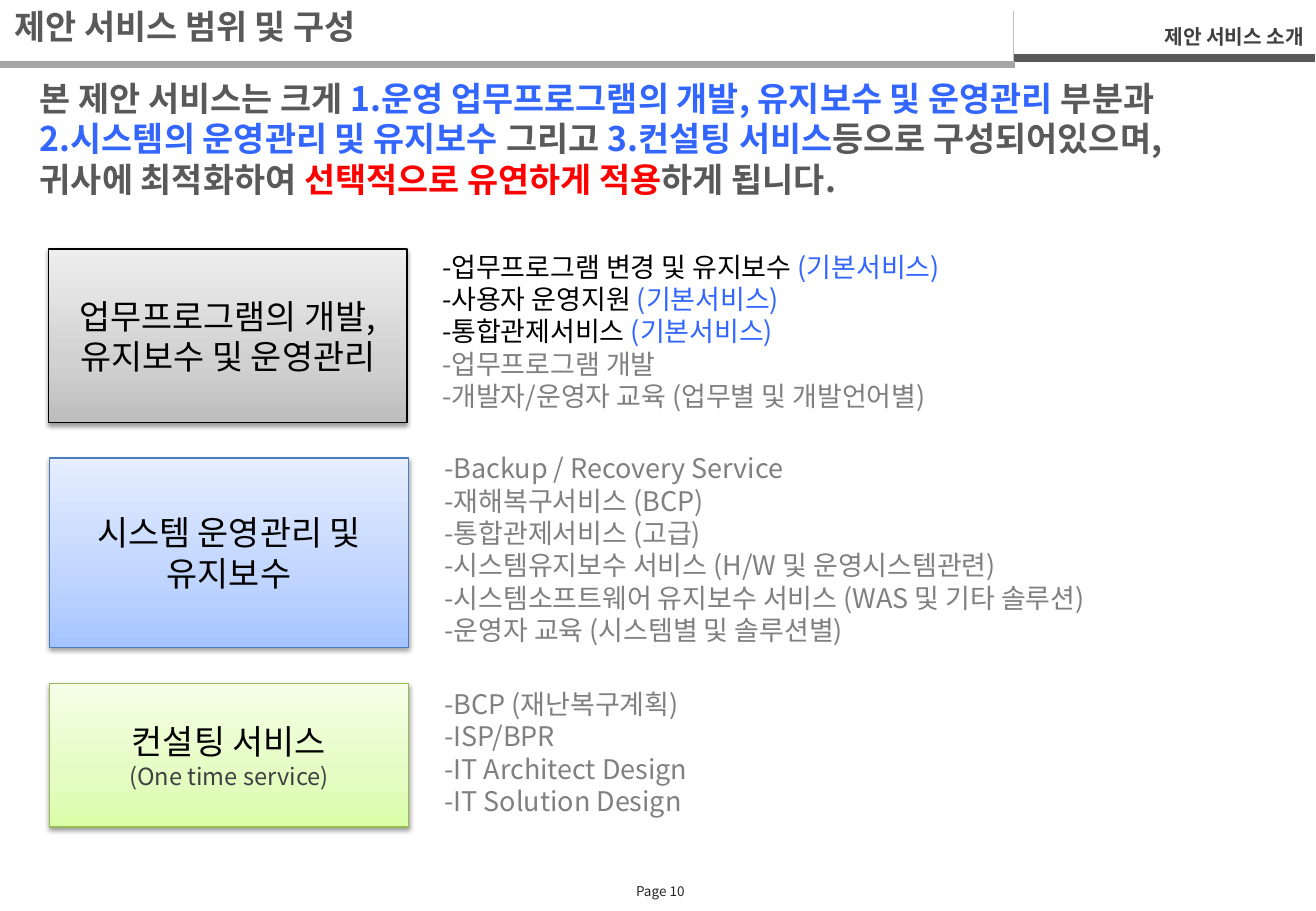
"""Build the slide on the scope and structure of the proposed services."""
import copy

import pptx
import pptx.dml.color
import pptx.enum.shapes
import pptx.enum.text
import pptx.oxml
import pptx.oxml.ns
import pptx.util

Inches, Pt = pptx.util.Inches, pptx.util.Pt
ALIGN = pptx.enum.text.PP_ALIGN
ANCHOR = pptx.enum.text.MSO_ANCHOR
FONT = "Noto Sans CJK KR"
LINE_HEIGHT = 1.2
BLACK, DARK, SLATE, GRAY = "000000", "404040", "595959", "808080"
BLUE, RED = "3366FF", "FF0000"

TITLE = [[("제안 서비스 범위 및 구성", SLATE)]]
SECTION = [[("제안 서비스 소개", DARK)]]
PAGE = [[("Page 10", "262626")]]
SUMMARY = [
    [("본 제안 서비스는 크게 ", SLATE),
     ("1.운영 업무프로그램의 개발, 유지보수 및 운영관리", BLUE), (" 부분과", SLATE)],
    [("2.시스템의 운영관리 및 유지보수 ", BLUE), ("그리고 ", SLATE),
     ("3.컨설팅 서비스", BLUE), ("등으로 구성되어있으며,", SLATE)],
    [("귀사에 최적화하여 ", SLATE), ("선택적으로 유연하게 적용", RED),
     ("하게 됩니다.", SLATE)],
]
BASIC = ("(기본서비스)", BLUE)
SERVICES = [
    {
        "box": (0.4, 2.05, 2.95, 1.43),
        "gradient": ("BDBDBD", "D1D1D1", "EEEEEE"), "border": BLACK,
        "name": [[("업무프로그램의 개발,", BLACK)], [("유지보수 및 운영관리", BLACK)]],
        "list": (3.54, 2.01, 6.56, 1.45),
        "items": [
            [("-업무프로그램 변경 및 유지보수 ", BLACK), BASIC],
            [("-사용자 운영지원 ", BLACK), BASIC],
            [("-통합관제서비스 ", BLACK), BASIC],
            [("-업무프로그램 개발", GRAY)],
            [("-개발자/운영자 교육 (업무별 및 개발언어별)", GRAY)],
        ],
    },
    {
        "box": (0.41, 3.77, 2.95, 1.56),
        "gradient": ("A4C4FF", "BFD4FF", "E6EEFF"), "border": "4B7EBC",
        "name": [[("시스템 운영관리 및", BLACK)], [("유지보수", BLACK)]],
        "list": (3.56, 3.67, 6.43, 1.72),
        "items": [
            [("-Backup / Recovery Service", GRAY)],
            [("-재해복구서비스 (BCP)", GRAY)],
            [("-통합관제서비스 (고급)", GRAY)],
            [("-시스템유지보수 서비스 (H/W 및 운영시스템관련)", GRAY)],
            [("-시스템소프트웨어 유지보수 서비스 (WAS 및 기타 솔루션)", GRAY)],
            [("-운영자 교육 (시스템별 및 솔루션별)", GRAY)],
        ],
    },
    {
        "box": (0.41, 5.63, 2.95, 1.18),
        "gradient": ("DAFDA7", "E4FCC2", "F5FFE7"), "border": "98B955",
        "name": [[("컨설팅 서비스", BLACK)], [("(One time service)", DARK, 14)]],
        "list": (3.56, 5.61, 6.11, 1.18),
        "items": [
            [("-BCP (재난복구계획)", GRAY)],
            [("-ISP/BPR", GRAY)],
            [("-IT Architect Design", GRAY)],
            [("-IT Solution Design", GRAY)],
        ],
    },
]
RULES = [
    ((8.34, 0.48), (10.82, 0.48), SLATE, 4.5),
    ((8.34, 0.55), (8.34, 0.09), "BFBFBF", 0.25),
    ((0, 0.53), (8.35, 0.53), "A6A6A6", 4.5),
]
GRADIENT_STOPS = (0, 0.35, 1)
SHADOW = (
    '<a:outerShdw xmlns:a="http://schemas.openxmlformats.org/drawingml/2006/main" '
    'blurRad="39370" dist="20320" dir="5400000" rotWithShape="0">'
    '<a:srgbClr val="000000"><a:alpha val="38000"/></a:srgbClr></a:outerShdw>'
)


def rgb(code):
    return pptx.dml.color.RGBColor.from_string(code)


def write(frame, paragraphs, size, bold=False, align=ALIGN.LEFT,
          anchor=ANCHOR.TOP, spacing=LINE_HEIGHT):
    frame.word_wrap = True
    frame.vertical_anchor = anchor
    for index, parts in enumerate(paragraphs):
        paragraph = frame.add_paragraph() if index else frame.paragraphs[0]
        paragraph.alignment = align
        for text, color, *own_size in parts:
            run = paragraph.add_run()
            run.text = text
            font = run.font
            font.name, font.bold = FONT, bold
            font.size = Pt(own_size[0] if own_size else size)
            font.color.rgb = rgb(color)
            east_asian = pptx.oxml.ns.qn("a:ea")
            latin = run._r.rPr.find(pptx.oxml.ns.qn("a:latin"))
            latin.addnext(latin.makeelement(east_asian, {"typeface": FONT}))
            paragraph.line_spacing = Pt(font.size.pt * spacing)


def add_text(slide, place, paragraphs, size, **style):
    frame = slide.shapes.add_textbox(*map(Inches, place)).text_frame
    write(frame, paragraphs, size, **style)
    return frame


def add_rule(slide, start, end, color, width):
    rule = slide.shapes.add_connector(
        pptx.enum.shapes.MSO_CONNECTOR.STRAIGHT, *map(Inches, start + end))
    rule.line.color.rgb = rgb(color)
    rule.line.width = Pt(width)
    pptx.oxml.ns.qn("a:effectLst")
    properties = rule._element.spPr
    properties.append(properties.makeelement(pptx.oxml.ns.qn("a:effectLst"), {}))


def add_service(slide, service):
    box = slide.shapes.add_shape(
        pptx.enum.shapes.MSO_SHAPE.RECTANGLE, *map(Inches, service["box"]))
    box.fill.gradient()
    box.fill.gradient_angle = 90
    properties = box._element.spPr
    stops = properties.find(".//" + pptx.oxml.ns.qn("a:gsLst"))
    stops.insert(1, copy.deepcopy(stops[0]))
    for stop, position, color in zip(
            box.fill.gradient_stops, GRADIENT_STOPS, service["gradient"]):
        stop.position = position
        stop.color.rgb = rgb(color)
    box.line.color.rgb = rgb(service["border"])
    box.line.width = Pt(0.75)
    box.shadow.inherit = False
    effects = properties.find(pptx.oxml.ns.qn("a:effectLst"))
    effects.append(pptx.oxml.parse_xml(SHADOW))
    write(box.text_frame, service["name"], 20, align=ALIGN.CENTER, anchor=ANCHOR.MIDDLE)
    add_text(slide, service["list"], service["items"], 16)


def main():
    deck = pptx.Presentation()
    deck.slide_width, deck.slide_height = Inches(10.83), Inches(7.5)
    slide = deck.slides.add_slide(deck.slide_layouts[6])
    for rule in RULES:
        add_rule(slide, *rule)
    page = add_text(slide, (5.2, 7.27, 0.47, 0.14), PAGE, 8,
                    align=ALIGN.CENTER, anchor=ANCHOR.MIDDLE)
    page.word_wrap = False
    page.margin_left = page.margin_right = page.margin_top = page.margin_bottom = 0
    add_text(slide, (0.02, 0, 8.28, 0.49), TITLE, 20, bold=True)
    add_text(slide, (8.35, 0.09, 2.48, 0.36), SECTION, 12, bold=True,
             align=ALIGN.RIGHT, spacing=1.3 * LINE_HEIGHT)
    add_text(slide, (0.23, 0.59, 10.42, 1.21), SUMMARY, 20, bold=True)
    for service in SERVICES:
        add_service(slide, service)
    deck.save("out.pptx")


if __name__ == "__main__":
    main()
